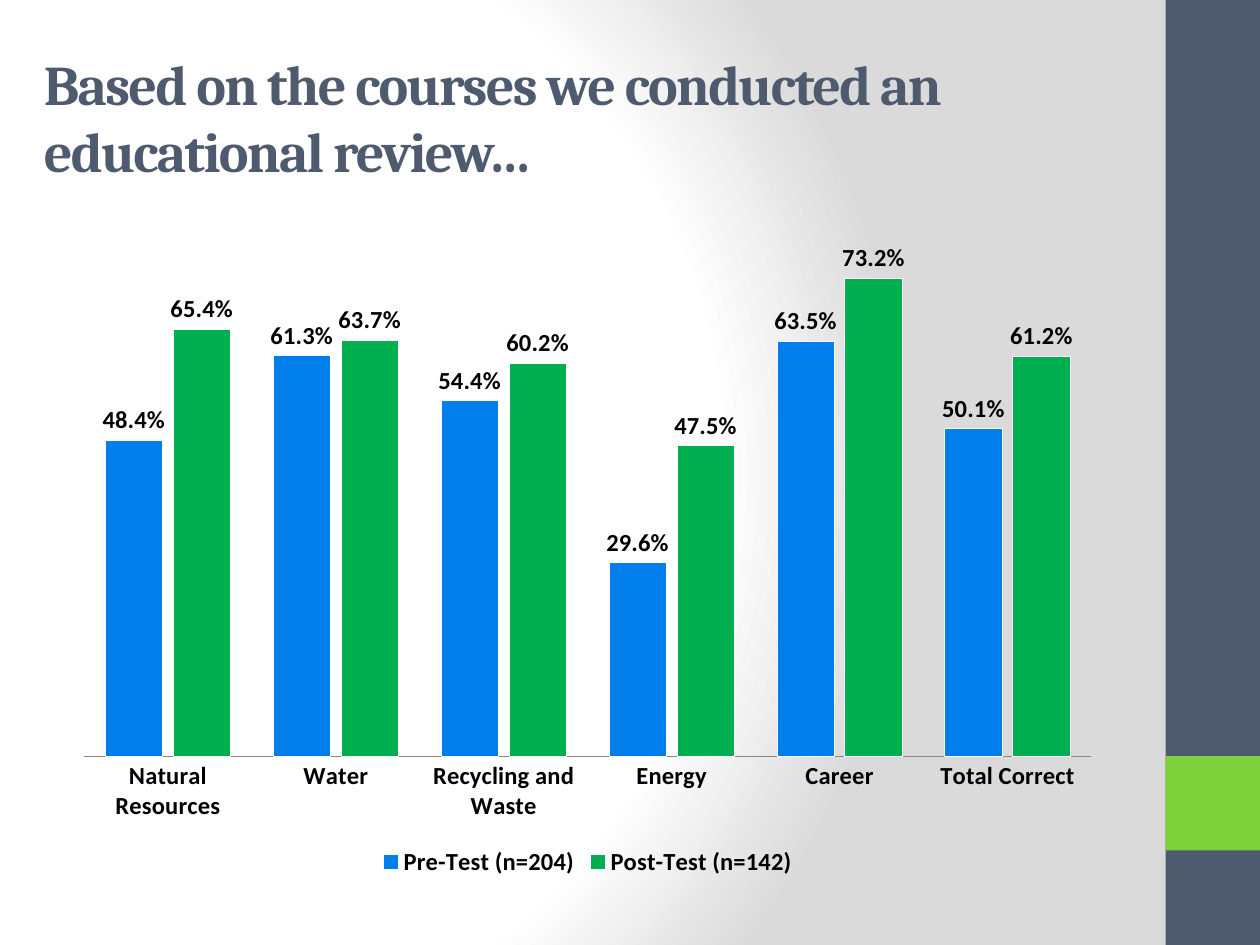
from pptx import Presentation
from pptx import util as u
from pptx.chart.data import CategoryChartData
from pptx.dml.color import RGBColor
from pptx.enum import chart as ch, shapes, text
from pptx.oxml import parse_xml
from pptx.oxml.ns import nsdecls

SLATE = RGBColor(0x4E, 0x5B, 0x6F)
LIME = RGBColor(0x7F, 0xD1, 0x3B)
BLUE = RGBColor(0x00, 0x7E, 0xEB)
GREEN = RGBColor(0x00, 0xB0, 0x50)
GRAY = RGBColor(0x86, 0x86, 0x86)
PALE = RGBColor(0xDA, 0xDA, 0xDA)
WHITE = RGBColor(0xFF, 0xFF, 0xFF)
BLACK = RGBColor(0, 0, 0)

CATEGORIES = ["Natural Resources", "Water", "Recycling and Waste",
              "Energy", "Career", "Total Correct"]
SERIES = [
    ("Pre-Test (n=204)", (0.484, 0.613, 0.544, 0.296, 0.635, 0.501), BLUE),
    ("Post-Test (n=142)", (0.654, 0.637, 0.602, 0.475, 0.732, 0.612), GREEN),
]


def set_font(font, name="Calibri", size=14, color=BLACK, bold=True):
    font.name = name
    font.size = u.Pt(size)
    font.bold = bold
    font.color.rgb = color


def write(tf, content, spacing=0, **style):
    r = tf.paragraphs[0].add_run()
    r.text = content
    set_font(r.font, **style)
    r.font._element.set("spc", str(spacing * 100))


class Deck:
    cols, rows = 40, 30

    def __init__(self):
        self.prs = Presentation()
        self.prs.slide_width, self.prs.slide_height = u.Inches(10), u.Inches(7.5)
        self.s = self.prs.slides.add_slide(self.prs.slide_layouts[6])

    def box(self, col, row, width, height):
        dx, dy = self.prs.slide_width / self.cols, self.prs.slide_height / self.rows
        return [int(v) for v in (col * dx, row * dy, width * dx, height * dy)]

    def background(self, stops):
        gs = "".join(f'<a:gs pos="{pos * 1000}"><a:srgbClr val="{color}"/></a:gs>'
                     for pos, color in stops)
        self.s.element.cSld.insert(0, parse_xml(
            f'<p:bg {nsdecls("p", "a")}><p:bgPr><a:gradFill rotWithShape="1">'
            f'<a:gsLst>{gs}</a:gsLst><a:path path="circle">'
            '<a:fillToRect l="20000" t="50000" r="100000" b="50000"/></a:path>'
            '</a:gradFill><a:effectLst/></p:bgPr></p:bg>'))

    def block(self, area, color):
        sp = self.s.shapes.add_shape(shapes.MSO_SHAPE.RECTANGLE, *self.box(*area))
        sp.shadow.inherit = False
        sp.fill.solid()
        sp.fill.fore_color.rgb = color
        sp.line.fill.background()

    def title(self, area, content):
        tf = self.s.shapes.add_textbox(*self.box(*area)).text_frame
        tf.word_wrap = True
        tf.vertical_anchor = text.MSO_ANCHOR.MIDDLE
        write(tf, content, spacing=-1, name="Cambria", size=32, color=SLATE)

    def columns(self, area, categories, series):
        data = CategoryChartData(number_format="0.0%")
        data.categories = categories
        for name, values, _ in series:
            data.add_series(name, values)
        chart = self.s.shapes.add_chart(
            ch.XL_CHART_TYPE.COLUMN_CLUSTERED, *self.box(*area), data).chart
        set_font(chart.font, size=10, bold=False)
        chart.has_title = False
        chart.has_legend = True
        chart.legend.position = ch.XL_LEGEND_POSITION.BOTTOM
        chart.legend.include_in_layout = False
        set_font(chart.legend.font)
        self.axes(chart)
        plot = chart.plots[0]
        plot.gap_width, plot.overlap, plot.vary_by_categories = 75, -19, False
        for ser, (_, _, color) in zip(plot.series, series):
            self.bars(ser, color)
        self.plot_area(chart, x=0.02, y=0.02, w=0.96, h=0.79)

    def axes(self, chart):
        cat, val = chart.category_axis, chart.value_axis
        cat.major_tick_mark = cat.minor_tick_mark = ch.XL_TICK_MARK.NONE
        cat.format.line.color.rgb = GRAY
        set_font(cat.tick_labels.font)
        val.visible = val.has_major_gridlines = False
        val.minimum_scale, val.maximum_scale = 0, 0.8
        val.tick_labels.number_format = "0.0%"
        val.tick_labels.number_format_is_linked = False

    def bars(self, ser, color):
        ser.format.fill.solid()
        ser.format.fill.fore_color.rgb = color
        ser.format.line.color.rgb = WHITE
        ser.invert_if_negative = False
        labels = ser.data_labels
        labels.show_value = True
        labels.number_format = "0.0%"
        labels.number_format_is_linked = False
        labels.position = ch.XL_LABEL_POSITION.OUTSIDE_END
        set_font(labels.font)

    def plot_area(self, chart, **shares):
        area = chart._chartSpace.chart.plotArea
        for old in area.xpath("c:layout"):
            area.remove(old)
        modes = "".join(f'<c:{k}Mode val="edge"/>' for k in "xy")
        sizes = "".join(f'<c:{k} val="{v}"/>' for k, v in shares.items())
        area.insert(0, parse_xml(
            f'<c:layout {nsdecls("c")}><c:manualLayout><c:layoutTarget val="inner"/>'
            f'{modes}{sizes}</c:manualLayout></c:layout>'))


def main():
    deck = Deck()
    deck.background([(0, WHITE), (75, WHITE), (100, PALE)])
    deck.block((37, 0, 3, 30), SLATE)
    deck.block((37, 24, 3, 3), LIME)
    deck.title((1, 1.2, 36, 5),
               "Based on the courses we conducted an educational review…")
    deck.columns((2, 7, 33.32, 21), CATEGORIES, SERIES)
    deck.prs.save("out.pptx")


if __name__ == "__main__":
    main()
